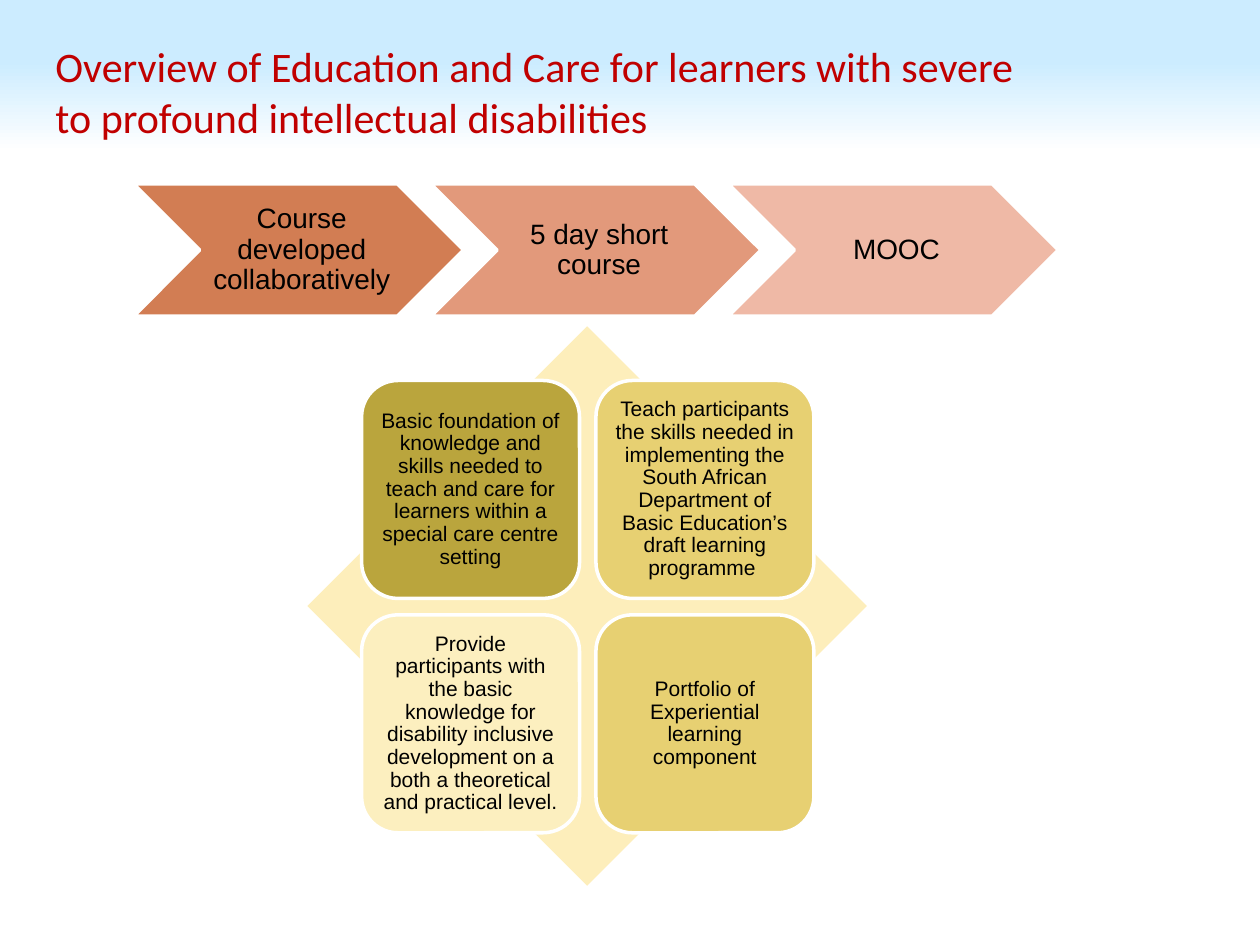
from pptx import Presentation
from pptx.dml.color import RGBColor
from pptx.enum import shapes, text
from pptx.util import Inches, Pt

WHITE = RGBColor(0xFF, 0xFF, 0xFF)
BLACK = RGBColor(0, 0, 0)
RED = RGBColor(0xC0, 0, 0)
SKY = RGBColor(0xCC, 0xEC, 0xFF)
CREAM = RGBColor(0xFD, 0xEE, 0xBB)
OLIVE = RGBColor(0xBA, 0xA5, 0x3D)
GOLD = RGBColor(0xE7, 0xD0, 0x72)
PALE = RGBColor(0xFC, 0xEF, 0xBF)
RUST = RGBColor(0xD2, 0x7D, 0x53)
CORAL = RGBColor(0xE2, 0x99, 0x7B)
PINK = RGBColor(0xEF, 0xB9, 0xA6)

KIND = shapes.MSO_SHAPE
STEPS = [
    ("Course developed collaboratively", RUST),
    ("5 day short course", CORAL),
    ("MOOC", PINK),
]
GOALS = [
    ("Basic foundation of knowledge and skills needed to teach and care for "
     "learners within a special care centre setting", OLIVE),
    ("Teach participants the skills needed in implementing the South African "
     "Department of Basic Education’s draft learning programme ", GOLD),
    ("Provide participants with the basic knowledge for disability inclusive "
     "development on a both a theoretical and practical level.", PALE),
    ("Portfolio of Experiential learning component", GOLD),
]


def add_shape(slide, kind, box, fill=None, line=None):
    shape = slide.shapes.add_shape(kind, *map(Inches, box))
    shape.shadow.inherit = False
    if fill is not None:
        shape.fill.solid()
        shape.fill.fore_color.rgb = fill
    if line is None:
        shape.line.fill.background()
    else:
        shape.line.color.rgb = line
        shape.line.width = Pt(2)
    return shape


def write(shape, words, size, font, color, align, pads, space):
    frame = shape.text_frame
    frame.word_wrap = True
    frame.auto_size = text.MSO_AUTO_SIZE.NONE
    frame.vertical_anchor = text.MSO_ANCHOR.MIDDLE
    (frame.margin_left, frame.margin_top,
     frame.margin_right, frame.margin_bottom) = map(Inches, pads)
    para = frame.paragraphs[0]
    para.alignment = align
    para.line_spacing = space
    run = para.add_run()
    run.text = words
    run.font.size = Pt(size)
    run.font.name = font
    run.font.color.rgb = color


def add_label(shape, words, size, pads):
    write(shape, words, size, "Arial", BLACK, text.PP_ALIGN.CENTER, pads, 0.9)


def add_band(slide):
    band = add_shape(slide, KIND.RECTANGLE, (0, 0, 10, 1.2))
    band.fill.gradient()
    band.fill.gradient_angle = 270
    for stop, place, color in zip(band.fill.gradient_stops, (0.41, 1), (SKY, WHITE)):
        stop.position = place
        stop.color.rgb = color
    slide.shapes.title.element.addprevious(band.element)


def add_title(slide, words):
    title = slide.shapes.title
    title.left, title.top = Inches(0.34), Inches(0.25)
    title.width, title.height = Inches(7.91), Inches(0.95)
    write(title, words, 24, "Calibri", RED, text.PP_ALIGN.LEFT,
          (0.1, 0.05, 0.1, 0.05), 1.0)


def add_steps(slide):
    for col, (words, fill) in enumerate(STEPS):
        box = (1.06 + col * 2.36, 1.46, 2.62, 1.05)
        step = add_shape(slide, KIND.CHEVRON, box, fill, WHITE)
        add_label(step, words, 16, (0.07, 0.02, 0.02, 0.02))


def add_goals(slide):
    add_shape(slide, KIND.DIAMOND, (2.44, 2.59, 4.44, 4.44), CREAM)
    for i, (words, fill) in enumerate(GOALS):
        row, col = divmod(i, 2)
        box = (2.87 + col * 1.86, 3.02 + row * 1.86, 1.73, 1.73)
        goal = add_shape(slide, KIND.ROUNDED_RECTANGLE, box, fill, WHITE)
        add_label(goal, words, 12, (0.05,) * 4)


def main():
    deck = Presentation()
    deck.slide_width, deck.slide_height = Inches(10), Inches(7.5)
    slide = deck.slides.add_slide(deck.slide_layouts[5])
    add_band(slide)
    add_title(slide, "Overview of Education and Care for learners with severe "
                     "to profound intellectual disabilities")
    add_steps(slide)
    add_goals(slide)
    deck.save("out.pptx")


if __name__ == "__main__":
    main()
